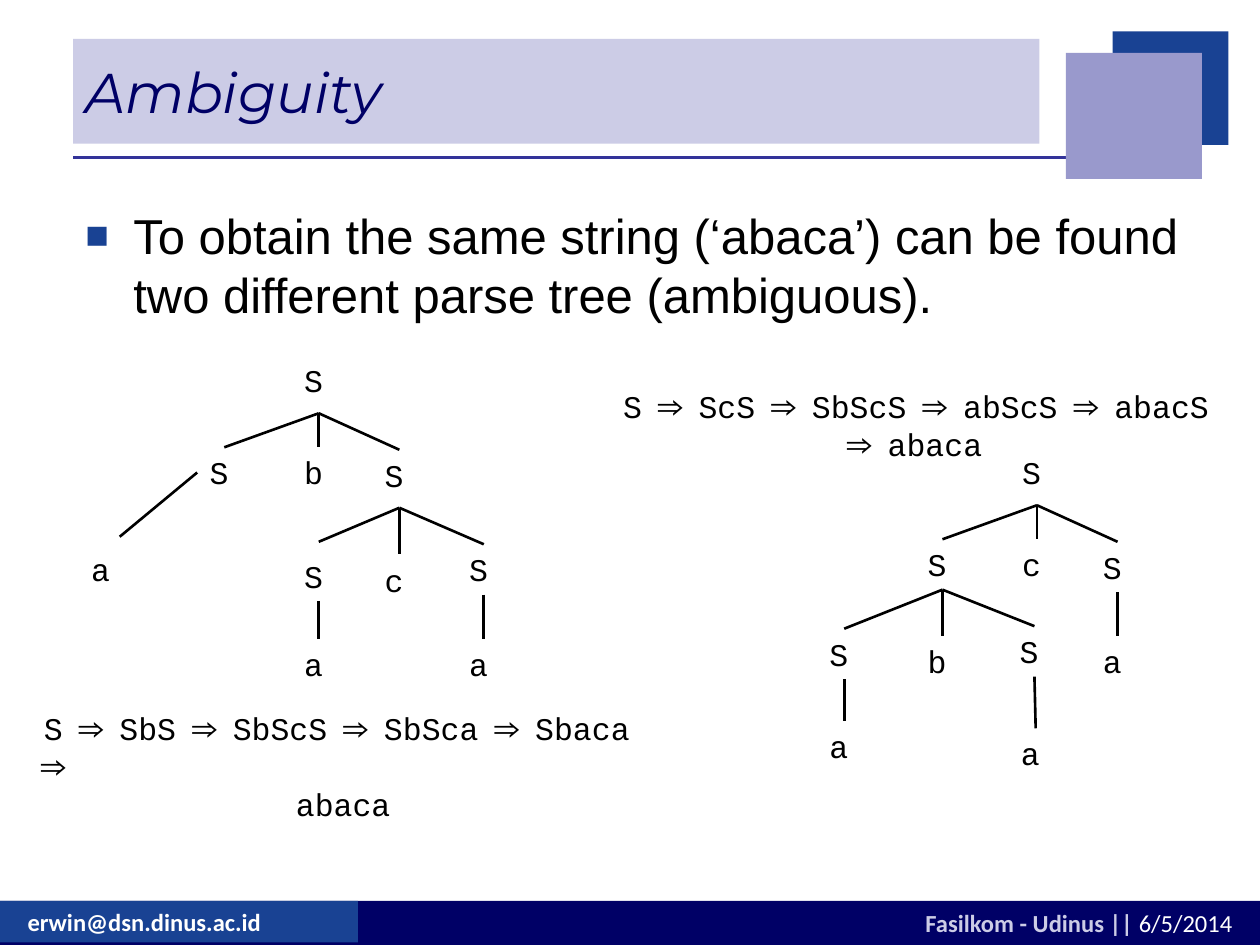
from dataclasses import dataclass

from lxml import etree
from pptx import Presentation, util as u
from pptx.dml.color import RGBColor
from pptx.enum import shapes, text
from pptx.oxml.ns import qn

INK = {"navy": "000066", "blue": "194293", "rule": "333399", "mauve": "9999CC",
       "pale": "CCCCE6", "black": "000000", "white": "FFFFFF"}
COLS, ROWS = 10, 7.5  # one grid cell is one inch square
LABEL = 0.43          # width of a node label
MONO = "Courier New"


@dataclass
class Box:
    x: float
    y: float
    w: float
    h: float
    fill: str


@dataclass
class Node:
    sym: str
    x: float             # centre column
    y: float             # top row
    h: float = 0.4
    kids: tuple = ()
    gap: float = 0       # space between the branch and the label
    side: bool = False   # branch leaves the parent's left edge


def cell(*vals: float) -> list:
    return [u.Inches(v) for v in vals]


def color(name: str) -> RGBColor:
    return RGBColor.from_string(INK[name])


def rect(slide, box: Box):
    shape = slide.shapes.add_shape(shapes.MSO_SHAPE.RECTANGLE,
                                   *cell(box.x, box.y, box.w, box.h))
    shape.shadow.inherit = False
    shape.fill.solid()
    shape.fill.fore_color.rgb = color(box.fill)
    shape.line.fill.background()
    return shape


def line(slide, x1: float, y1: float, x2: float, y2: float,
         ink: str = "black", width: float = 1.5) -> None:
    edge = slide.shapes.add_connector(shapes.MSO_CONNECTOR.STRAIGHT,
                                      *cell(x1, y1, x2, y2))
    edge.line.color.rgb = color(ink)
    edge.line.width = u.Pt(width)
    etree.SubElement(edge._element.spPr, qn("a:effectLst"))


def add_run(para, words: str, size: float = 18, face: str = MONO, ink: str = "black",
            bold: bool = False, ital: bool = False) -> None:
    run = para.add_run()
    run.text = words
    font = run.font
    font.size, font.name = u.Pt(size), face
    font.bold, font.italic = bold, ital
    font.color.rgb = color(ink)


def write(shape, words: str, align=text.PP_ALIGN.LEFT, anchor=text.MSO_ANCHOR.TOP,
          more: bool = False, left: float = 0, **style):
    """Put one paragraph in a shape; more=True adds it after the others."""
    frame = shape.text_frame
    frame.word_wrap = True
    frame.vertical_anchor = anchor
    para = frame.add_paragraph() if more else frame.paragraphs[0]
    para.alignment = align
    if left:
        para._p.get_or_add_pPr().set("marL", str(u.Inches(left)))
    add_run(para, words, **style)
    return para


def area(slide, x: float, y: float, w: float, h: float):
    return slide.shapes.add_textbox(*cell(x, y, w, h))


def bullet(para, indent: float) -> None:
    props = para._p.get_or_add_pPr()
    props.set("marL", str(u.Inches(indent)))
    props.set("indent", str(-u.Inches(indent)))
    tint = etree.SubElement(props, qn("a:buClr"))
    etree.SubElement(tint, qn("a:srgbClr")).set("val", INK["blue"])
    etree.SubElement(props, qn("a:buSzPct")).set("val", "80000")
    etree.SubElement(props, qn("a:buFont")).set("typeface", "Arial")
    etree.SubElement(props, qn("a:buChar")).set("char", "■")


def tree(slide, node: Node) -> None:
    """Draw a node's label, its branches and all nodes below it."""
    write(area(slide, node.x - LABEL / 2, node.y, LABEL, node.h), node.sym)
    for kid in node.kids:
        if kid.side:
            line(slide, node.x - LABEL / 2, node.y + node.h / 2,
                 kid.x + 0.11, kid.y - kid.gap)
        else:
            line(slide, node.x, node.y + node.h, kid.x, kid.y - kid.gap)
        tree(slide, kid)


def leaf(x: float, y: float, **place) -> Node:
    return Node("a", x, y, 0.44, **place)


LEFT = Node("S", 2.53, 2.82, 0.46, (
    Node("S", 1.78, 3.55, kids=(leaf(0.84, 4.32, gap=0.06, side=True),)),
    Node("b", 2.53, 3.55),
    Node("S", 3.17, 3.57, 0.46, (
        Node("S", 2.53, 4.37, kids=(leaf(2.53, 5.07),), gap=0.07),
        Node("c", 3.17, 4.4),
        Node("S", 3.84, 4.32, kids=(leaf(3.84, 5.07),))))))

RIGHT = Node("S", 8.23, 3.55, 0.46, (
    Node("S", 7.48, 4.28, kids=(
        Node("S", 6.7, 4.99, kids=(leaf(6.7, 5.72),)),
        Node("b", 7.48, 5.05),
        Node("S", 8.21, 4.97, kids=(leaf(8.22, 5.78),)))),
    Node("c", 8.23, 4.28),
    Node("S", 8.87, 4.3, kids=(leaf(8.87, 5.05),))))


def main() -> None:
    deck = Presentation()
    deck.slide_width, deck.slide_height = cell(COLS, ROWS)
    slide = deck.slides.add_slide(deck.slide_layouts[6])

    # Rule, footer bands and corner squares
    line(slide, 0.58, 1.25, 8.5, 1.25, "rule", 2.25)
    for box in (Box(0, 7.15, COLS, 0.35, "navy"), Box(0, 7.15, 2.84, 0.33, "blue"),
                Box(8.83, 0.25, 0.92, 0.9, "blue"), Box(8.46, 0.42, 1.08, 1, "mauve")):
        rect(slide, box)

    # Footer text
    foot = {"size": 14, "face": "Calibri"}
    write(area(slide, 0.12, 7.15, 2.72, 0.34), "erwin@dsn.dinus.ac.id",
          ink="white", bold=True, **foot)
    para = write(rect(slide, Box(6.8, 7.16, 3.08, 0.34, "navy")),
                 "Fasilkom - Udinus || ", align=text.PP_ALIGN.RIGHT,
                 ink="pale", bold=True, **foot)
    add_run(para, "6/5/2014", ink="white", **foot)

    # Title and body
    write(rect(slide, Box(0.58, 0.31, 7.67, 0.83, "pale")), "Ambiguity",
          anchor=text.MSO_ANCHOR.MIDDLE, size=32, face="Montserrat",
          ink="navy", ital=True)
    para = write(area(slide, 0.58, 1.58, 8.92, 5.17),
                 "To obtain the same string (‘abaca’) can be found "
                 "two different parse tree (ambiguous).", size=28, face="Arial")
    bullet(para, 0.38)

    # Parse trees and their derivations
    tree(slide, LEFT)
    steps = area(slide, 0.25, 5.58, 5, 0.71)
    write(steps, "S ⇒ SbS ⇒ SbScS ⇒ SbSca ⇒ Sbaca ⇒")
    write(steps, "abaca", more=True, left=2)
    tree(slide, RIGHT)
    write(area(slide, 4.77, 3.02, 5, 0.71),
          "S ⇒ ScS ⇒ SbScS ⇒ abScS ⇒ abacS ⇒ abaca", align=text.PP_ALIGN.CENTER)

    deck.save("out.pptx")


if __name__ == "__main__":
    main()
